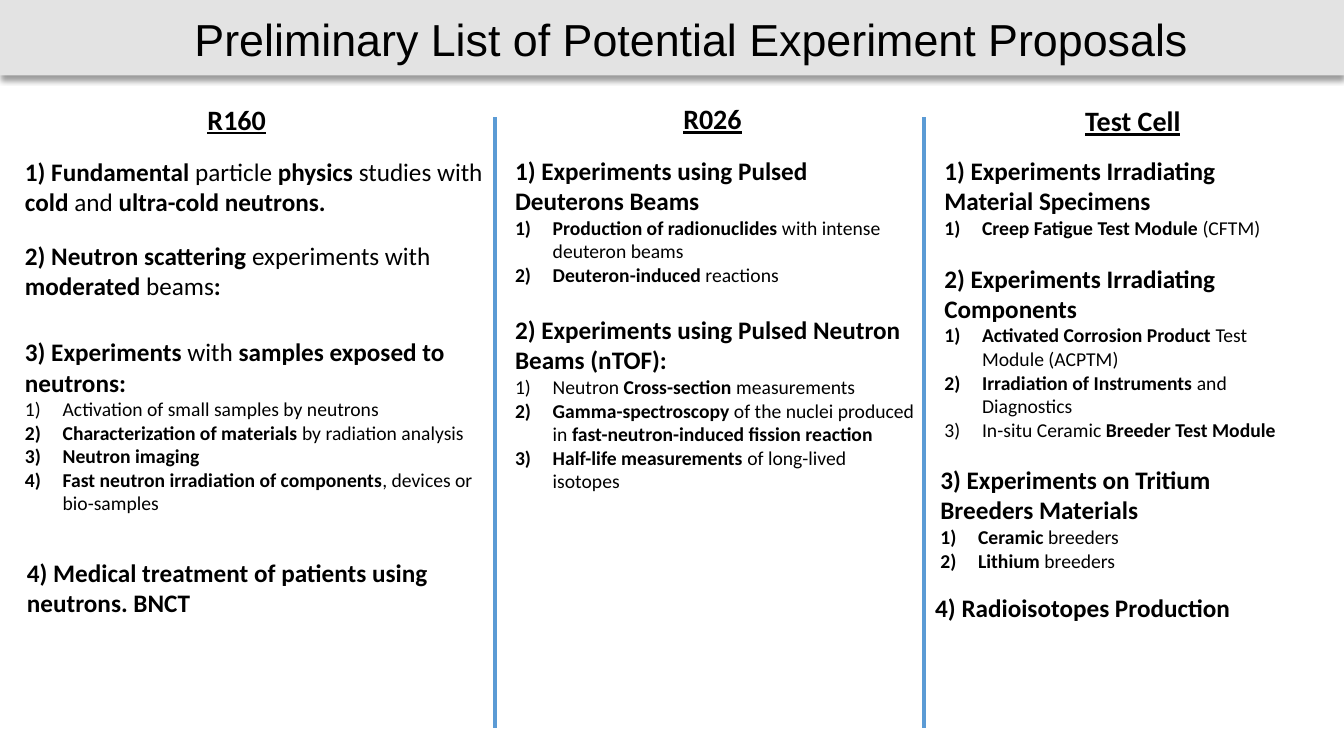
from lxml import etree
from pptx import Presentation
from pptx.dml.color import RGBColor
from pptx.enum import shapes, text
from pptx.oxml import ns
from pptx.util import Cm, Pt

BLACK = RGBColor(0x00, 0x00, 0x00)
BAR_GREY = RGBColor(0xE3, 0xE3, 0xE3)
RULE_BLUE = RGBColor(0x5B, 0x9B, 0xD5)
PAGE_WIDTH, PAGE_HEIGHT = 33.87, 19.05
COLUMN_TOP = 2.45
INDENT = 0.95

# Each column: left edge, heading (text, dx, dy), and topics (dx, dy, width, height, lines).
# The first line of a topic is its title; the rest are numbered. **Stars** mark bold text.
COLUMNS = [
    (0.38, ("R160", 4.6, 0), [
        (0, 1.36, 13.13, 1.8, [
            "**1) Fundamental **particle** physics **studies with **cold **and** ultra-cold neutrons.**"]),
        (0, 3.47, 13.13, 1.8, [
            "**2) Neutron scattering **experiments with **moderated **beams**:**"]),
        (0, 5.91, 11.89, 4.78, [
            "**3) Experiments **with** samples exposed to neutrons:**",
            "Activation of small samples by neutrons",
            "**Characterization of materials **by radiation analysis",
            "**Neutron imaging**",
            "**Fast neutron irradiation of components**, devices or bio-samples"]),
        (0.05, 11.47, 13.06, 1.8, [
            "**4) Medical treatment of patients using neutrons. BNCT**"]),
    ]),
    (12.73, ("R026", 4.24, -0.02), [
        (0, 1.33, 10.4, 3.58, [
            "**1) Experiments using Pulsed Deuterons Beams**",
            "**Production of radionuclides **with intense deuteron beams",
            "**Deuteron-induced** reactions"]),
        (0, 5.35, 10.59, 4.78, [
            "**2) Experiments using Pulsed Neutron Beams (nTOF):**",
            "Neutron **Cross-section** measurements",
            "**Gamma-spectroscopy** of the nuclei produced in **fast-neutron-induced fission reaction**",
            "**Half-life measurements **of long-lived isotopes"]),
    ]),
    (23.55, ("Test Cell", 3.55, 0.04), [
        (0, 1.33, 8.53, 2.39, [
            "**1) Experiments Irradiating Material Specimens**",
            "**Creep Fatigue Test Module** (CFTM)"]),
        (0, 4.05, 9.63, 4.78, [
            "**2) Experiments Irradiating Components**",
            "**Activated Corrosion Product **Test Module (ACPTM)",
            "**Irradiation of Instruments **and Diagnostics",
            "In-situ Ceramic **Breeder Test Module**"]),
        (-0.1, 9.13, 9.63, 3, [
            "**3) Experiments on Tritium Breeders Materials**",
            "**Ceramic **breeders",
            "**Lithium **breeders"]),
        (-0.23, 12.36, 9.63, 1.02, ["**4) Radioisotopes Production**"]),
    ]),
]


def write(para, content, size=18, font="Calibri", underline=None):
    """Fill a paragraph, switching bold at each pair of stars."""
    for position, part in enumerate(content.split("**")):
        if part:
            span = para.add_run()
            span.text = part
            span.font.name = font
            span.font.size = Pt(size)
            span.font.bold = position % 2 == 1
            span.font.underline = underline
            span.font.color.rgb = BLACK


def number(para):
    """Give a paragraph automatic numbering with a hanging indent."""
    properties = para._p.get_or_add_pPr()
    properties.set("marL", str(Cm(INDENT)))
    properties.set("indent", str(-Cm(INDENT)))
    etree.SubElement(properties, ns.qn("a:buFont"), typeface="+mj-lt")
    etree.SubElement(properties, ns.qn("a:buAutoNum"), type="arabicParenR")


def add_text(page, left, top, width, height, lines, **style):
    """Add a wrapping text box whose later lines form a numbered list."""
    box = page.shapes.add_textbox(Cm(left), Cm(top), Cm(width), Cm(height))
    frame = box.text_frame
    frame.word_wrap = True
    frame.auto_size = text.MSO_AUTO_SIZE.SHAPE_TO_FIT_TEXT
    write(frame.paragraphs[0], lines[0], **style)
    for line in lines[1:]:
        para = frame.add_paragraph()
        number(para)
        write(para, line, size=14)
    return frame


def add_header(page, left, top, width, height):
    # Shaded bar
    bar = page.shapes.add_shape(shapes.MSO_SHAPE.RECTANGLE,
                                Cm(left), Cm(top), Cm(width), Cm(height))
    bar.fill.solid()
    bar.fill.fore_color.rgb = BAR_GREY
    bar.line.fill.background()
    bar.shadow.inherit = False
    effects = bar._element.spPr.find(ns.qn("a:effectLst"))
    shadow = etree.SubElement(effects, ns.qn("a:outerShdw"), blurRad=str(Pt(4)),
                              dist=str(Pt(3)), dir="5400000", algn="t", rotWithShape="0")
    colour = etree.SubElement(shadow, ns.qn("a:srgbClr"), val=str(BLACK))
    etree.SubElement(colour, ns.qn("a:alpha"), val="40000")

    # Title
    frame = add_text(page, left + 3.73, top - 0.25, 27.41, 2.46,
                     ["Preliminary List of Potential Experiment Proposals"],
                     size=32, font="Arial")
    frame.auto_size = text.MSO_AUTO_SIZE.NONE
    frame.vertical_anchor = text.MSO_ANCHOR.MIDDLE
    frame.paragraphs[0].alignment = text.PP_ALIGN.CENTER


def add_column(page, left, top, heading, topics):
    title, heading_dx, heading_dy = heading
    add_text(page, left + heading_dx, top + heading_dy, 3.61, 1.12,
             [f"**{title}**"], size=20, underline=True)
    for dx, dy, width, height, lines in topics:
        add_text(page, left + dx, top + dy, width, height, lines)


def add_divider(page, x, top, bottom):
    rule = page.shapes.add_connector(shapes.MSO_CONNECTOR.STRAIGHT,
                                     Cm(x), Cm(top), Cm(x), Cm(bottom))
    rule.line.color.rgb = RULE_BLUE
    rule.line.width = Pt(2.5)
    etree.SubElement(rule._element.spPr, ns.qn("a:effectLst"))


def main():
    deck = Presentation()
    deck.slide_width, deck.slide_height = Cm(PAGE_WIDTH), Cm(PAGE_HEIGHT)
    page = deck.slides.add_slide(deck.slide_layouts[6])

    add_header(page, 0, 0, PAGE_WIDTH, 1.9)
    for left, heading, topics in COLUMNS:
        add_column(page, left, COLUMN_TOP, heading, topics)
    for x in (12.47, 23.29):
        add_divider(page, x, 2.95, 18.34)

    deck.save("out.pptx")


if __name__ == "__main__":
    main()
